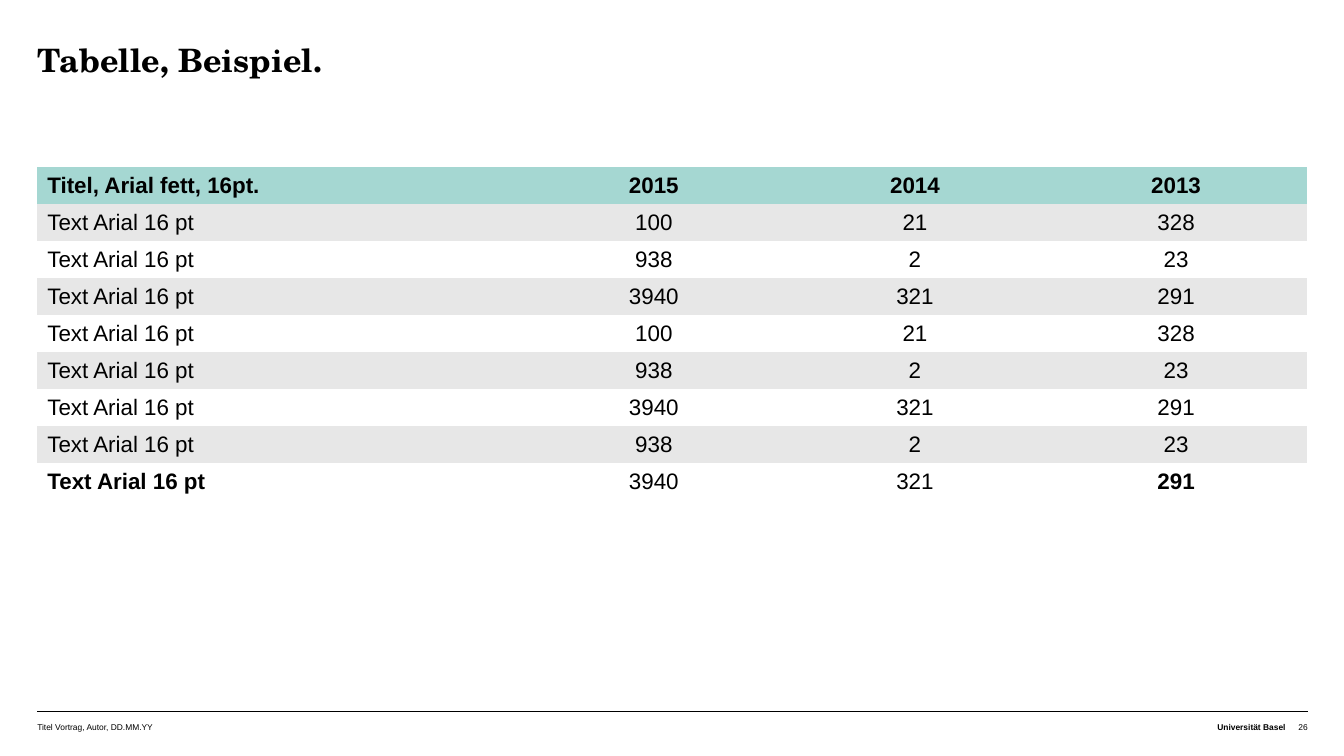
"""Build the slide with the example table."""
from dataclasses import dataclass

from lxml import etree
from pptx import Presentation
from pptx.dml.color import RGBColor
from pptx.enum.shapes import MSO_CONNECTOR
from pptx.enum.text import MSO_ANCHOR, PP_ALIGN
from pptx.oxml.ns import qn
from pptx.util import Inches, Pt

LEFT, CENTER, RIGHT = PP_ALIGN.LEFT, PP_ALIGN.CENTER, PP_ALIGN.RIGHT
MIDDLE = MSO_ANCHOR.MIDDLE
STRAIGHT = MSO_CONNECTOR.STRAIGHT

BLACK, WHITE, MINT, GREY = "000000", "FFFFFF", "A5D7D2", "E7E7E7"
MARGIN, CONTENT_WIDTH = 0.37, 12.6
TABLE_TOP, TABLE_HEIGHT = 1.66, 3.29
COLUMN_WIDTHS = (4.82, 2.59, 2.59, 2.59)
FOOTER_TOP, FOOTER_HEIGHT = 7.14, 0.2

LABEL = "Text Arial 16 pt"
HEADER = ("Titel, Arial fett, 16pt.", "2015", "2014", "2013")
VALUES_A = ("100", "21", "328")
VALUES_B = ("938", "2", "23")
VALUES_C = ("3940", "321", "291")
BODY = (VALUES_A, VALUES_B, VALUES_C, VALUES_A, VALUES_B, VALUES_C, VALUES_B, VALUES_C)
ROWS = [HEADER] + [(LABEL, *values) for values in BODY]
BOLD_TOTALS = (0, 3)


@dataclass(frozen=True)
class TextStyle:
    size: float
    bold: bool = False
    font: str = "Arial"
    align: PP_ALIGN = LEFT


@dataclass(frozen=True)
class Label:
    text: str
    left: float
    top: float
    width: float
    height: float
    style: TextStyle
    top_inset: float = 0
    line_spacing: float | None = None


LABELS = (
    Label("Tabelle, Beispiel.", MARGIN, 0.44, CONTENT_WIDTH, 0.83,
          TextStyle(23, True, "TeX Gyre Schola"), line_spacing=25),
    Label("Titel Vortrag, Autor, DD.MM.YY", MARGIN, FOOTER_TOP, 3.15, FOOTER_HEIGHT,
          TextStyle(6), 0.02),
    Label("Universität Basel", 9.97, FOOTER_TOP, 2.78, FOOTER_HEIGHT,
          TextStyle(6, True, align=RIGHT), 0.02),
    Label("26", 12.76, FOOTER_TOP, 0.21, FOOTER_HEIGHT,
          TextStyle(6, align=RIGHT), 0.02),
)


def color(value: str) -> RGBColor:
    return RGBColor.from_string(value)


def write(text_frame, text: str, style: TextStyle) -> None:
    text_frame.text = text
    paragraph = text_frame.paragraphs[0]
    paragraph.alignment = style.align
    font = paragraph.runs[0].font
    font.name, font.size, font.bold = style.font, Pt(style.size), style.bold
    font.color.rgb = color(BLACK)


def add_label(slide, label: Label) -> None:
    shape = slide.shapes.add_textbox(Inches(label.left), Inches(label.top),
                                     Inches(label.width), Inches(label.height))
    text_frame = shape.text_frame
    text_frame.word_wrap = True
    text_frame.margin_left = text_frame.margin_right = text_frame.margin_bottom = 0
    text_frame.margin_top = Inches(label.top_inset)
    write(text_frame, label.text, label.style)
    if label.line_spacing:
        text_frame.paragraphs[0].line_spacing = Pt(label.line_spacing)


def add_footer_line(slide) -> None:
    line = slide.shapes.add_connector(STRAIGHT, Inches(MARGIN), Inches(7.06),
                                      Inches(MARGIN + CONTENT_WIDTH), Inches(7.06))
    line.line.color.rgb = color(BLACK)
    line.line.width = Pt(0.25)
    etree.SubElement(line._element.spPr, qn("a:effectLst"))


def row_fill(row: int) -> str:
    if row == 0:
        return MINT
    return GREY if row % 2 else WHITE


def is_bold(row: int, column: int) -> bool:
    return row == 0 or (row == len(ROWS) - 1 and column in BOLD_TOTALS)


def add_value_table(slide) -> None:
    table = slide.shapes.add_table(len(ROWS), len(COLUMN_WIDTHS),
                                   Inches(MARGIN), Inches(TABLE_TOP),
                                   Inches(CONTENT_WIDTH), Inches(TABLE_HEIGHT)).table
    for column, width in zip(table.columns, COLUMN_WIDTHS):
        column.width = Inches(width)
    for row, texts in enumerate(ROWS):
        for column, text in enumerate(texts):
            cell = table.cell(row, column)
            cell.fill.solid()
            cell.fill.fore_color.rgb = color(row_fill(row))
            cell.margin_left = cell.margin_right = Inches(0.1)
            cell.margin_top = cell.margin_bottom = Inches(0.05)
            cell.vertical_anchor = MIDDLE
            write(cell.text_frame, text,
                  TextStyle(16, is_bold(row, column), align=CENTER if column else LEFT))
            add_hidden_borders(cell)


def add_hidden_borders(cell) -> None:
    properties = cell._tc.get_or_add_tcPr()
    for index, side in enumerate(("a:lnL", "a:lnR", "a:lnT", "a:lnB")):
        border = etree.Element(qn(side), w="0")
        etree.SubElement(border, qn("a:noFill"))
        properties.insert(index, border)


def main() -> None:
    presentation = Presentation()
    presentation.slide_width = Inches(13.33)
    presentation.slide_height = Inches(7.5)
    slide = presentation.slides.add_slide(presentation.slide_layouts[6])
    add_footer_line(slide)
    for label in LABELS:
        add_label(slide, label)
    add_value_table(slide)
    presentation.save("out.pptx")


if __name__ == "__main__":
    main()
